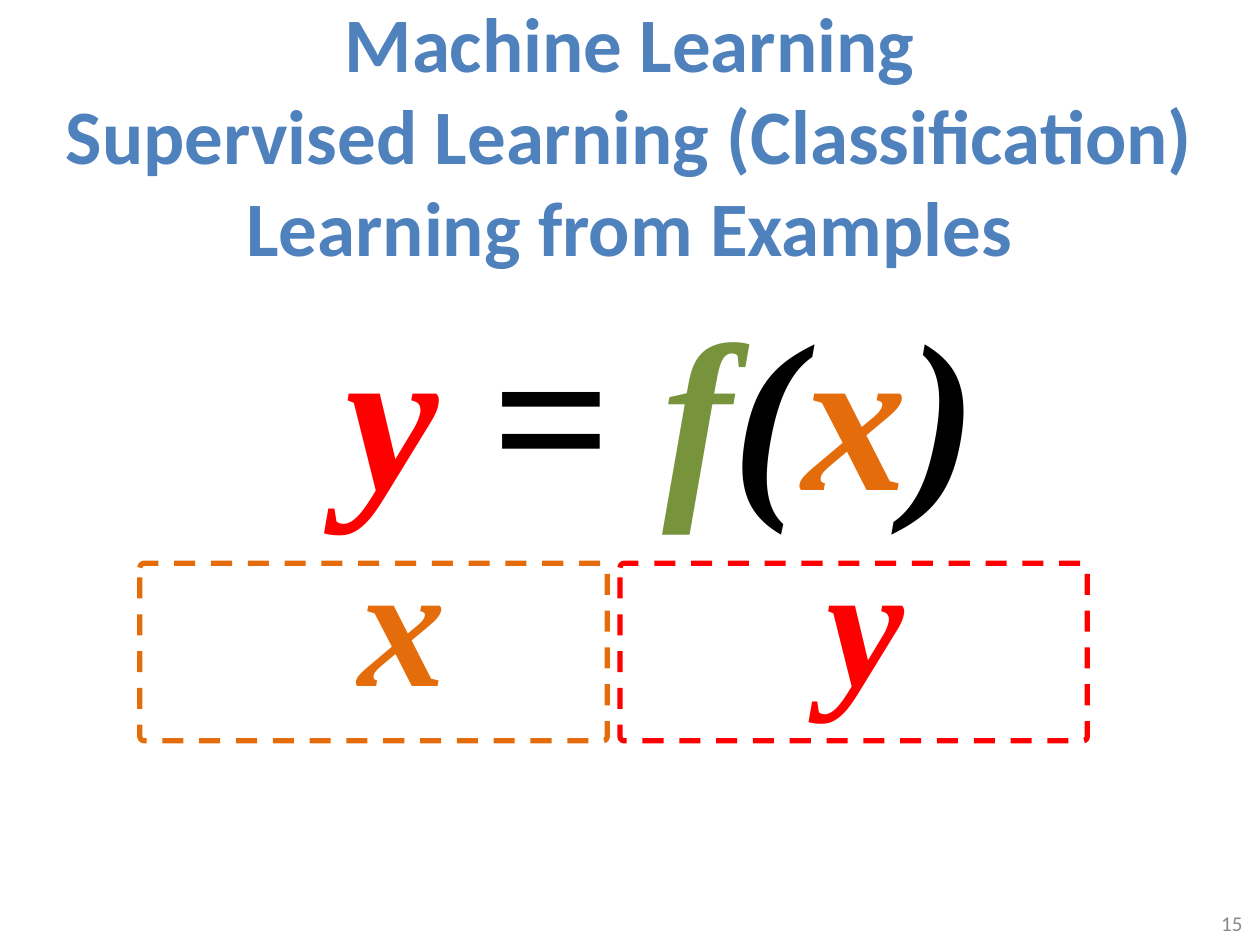
from typing import NamedTuple

from pptx import Presentation
from pptx import util as u
from pptx.dml.color import RGBColor
from pptx.enum import dml, shapes, text

BLUE = RGBColor(0x4F, 0x81, 0xBD)
GREY = RGBColor(0x89, 0x89, 0x89)
ORANGE = RGBColor(0xE4, 0x6C, 0x0A)
RED = RGBColor(0xFF, 0x00, 0x00)
GREEN = RGBColor(0x77, 0x93, 0x3C)
BLACK = RGBColor(0x00, 0x00, 0x00)

MATH = dict(font="Times New Roman", bold=True, italic=True, wrap=False)


class Box(NamedTuple):
    left: float
    top: float
    width: float
    height: float

    def emu(self) -> list[u.Length]:
        return [u.Inches(v) for v in self]


class Span(NamedTuple):
    text: str
    color: RGBColor


class Variable(NamedTuple):
    name: str
    color: RGBColor
    frame: Box
    label: Box


VARIABLES = [
    Variable("x", ORANGE, Box(1.11, 4.47, 3.71, 1.41), Box(2.75, 4.01, 0.9, 1.78)),
    Variable("y", RED, Box(4.92, 4.47, 3.71, 1.41), Box(6.46, 4.01, 0.82, 1.78)),
]
FORMULA = [Span("y", RED), Span(" = ", BLACK), Span("f", GREEN),
           Span("(", BLACK), Span("x", ORANGE), Span(")", BLACK)]


def add_text(s, box: Box, spans: list[Span], *, size: float, font: str = "Calibri",
             bold: bool = False, italic: bool = False, wrap: bool = True,
             align=text.PP_ALIGN.LEFT, anchor=text.MSO_ANCHOR.TOP) -> None:
    """Add one paragraph of coloured spans; a newline becomes a line break."""
    tf = s.shapes.add_textbox(*box.emu()).text_frame
    tf.word_wrap = wrap
    tf.auto_size = text.MSO_AUTO_SIZE.NONE if wrap else text.MSO_AUTO_SIZE.SHAPE_TO_FIT_TEXT
    tf.vertical_anchor = anchor
    p = tf.paragraphs[0]
    p.alignment = align
    p.font.size = u.Pt(size)
    for span in spans:
        for i, line in enumerate(span.text.split("\n")):
            if i:
                p.add_line_break()
            r = p.add_run()
            r.text = line
            r.font.name = font
            r.font.size = u.Pt(size)
            r.font.bold = bold
            r.font.italic = italic
            r.font.color.rgb = span.color


def add_dashed_frame(s, box: Box, color: RGBColor) -> None:
    sp = s.shapes.add_shape(shapes.MSO_SHAPE.ROUNDED_RECTANGLE, *box.emu())
    sp.adjustments[0] = 0.025
    sp.shadow.inherit = False
    sp.fill.background()
    sp.line.color.rgb = color
    sp.line.width = u.Pt(3)
    sp.line.dash_style = dml.MSO_LINE.DASH


def main() -> None:
    prs = Presentation()
    prs.slide_width, prs.slide_height = u.Inches(10), u.Inches(7.5)
    s = prs.slides.add_slide(prs.slide_layouts[6])

    title = "Machine Learning\nSupervised Learning (Classification)\nLearning from Examples"
    add_text(s, Box(0.27, 0, 9.46, 2.12), [Span(title, BLUE)], size=44, bold=True,
             align=text.PP_ALIGN.CENTER, anchor=text.MSO_ANCHOR.MIDDLE)
    add_text(s, Box(7.63, 7.13, 2.33, 0.4), [Span("15", GREY)], size=12,
             align=text.PP_ALIGN.RIGHT, anchor=text.MSO_ANCHOR.MIDDLE)

    for v in VARIABLES:
        add_dashed_frame(s, v.frame, v.color)
    for v in VARIABLES:
        add_text(s, v.label, [Span(v.name, v.color)], size=100, **MATH)
    add_text(s, Box(2.64, 2.18, 5.27, 2.12), FORMULA, size=120, **MATH)

    prs.save("out.pptx")


if __name__ == "__main__":
    main()
